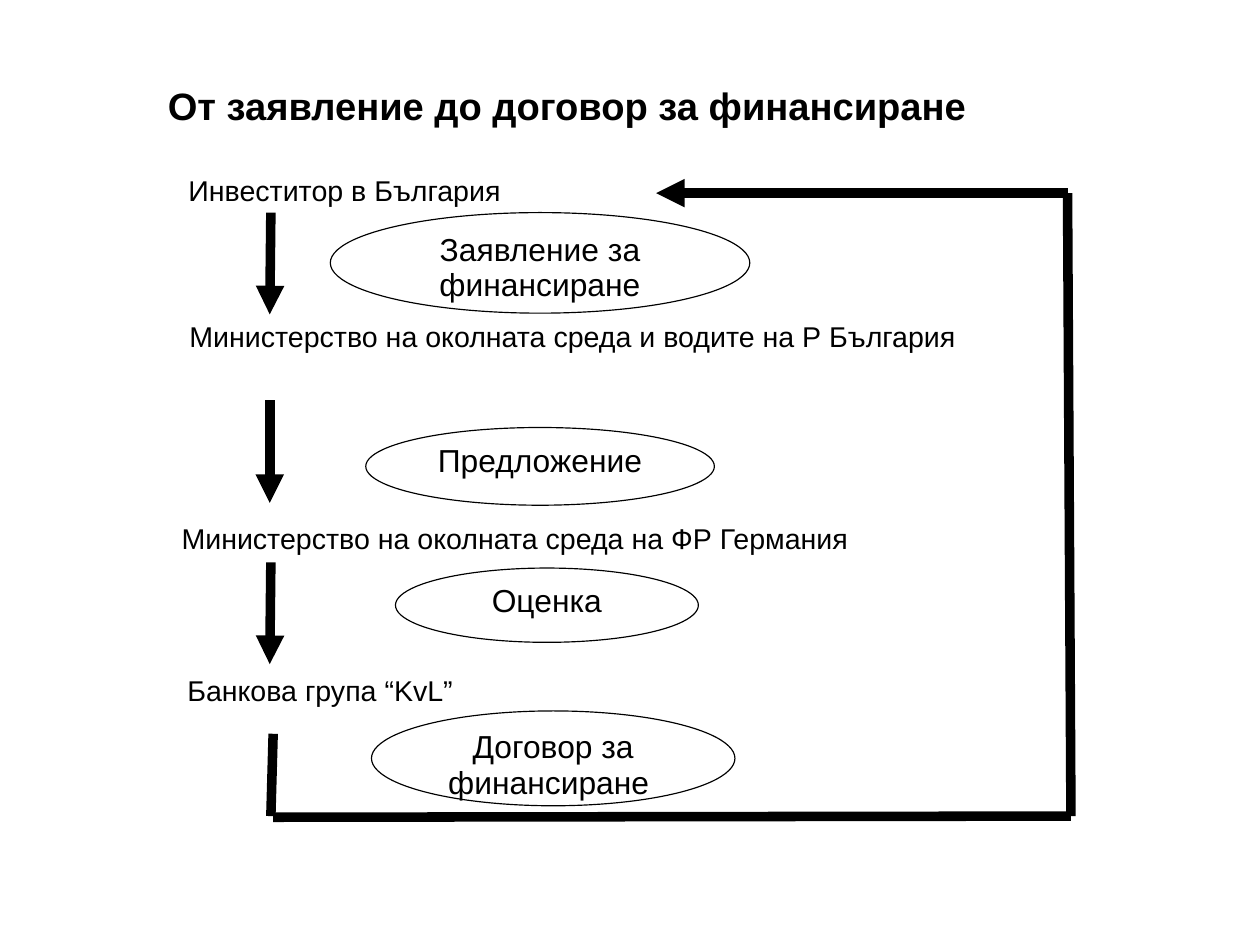
from dataclasses import dataclass

from lxml import etree
from pptx import Presentation
from pptx.dml.color import RGBColor
from pptx.enum.shapes import MSO_CONNECTOR as Connector, MSO_SHAPE as Shape
from pptx.enum.text import MSO_ANCHOR as Anchor, PP_ALIGN as Align
from pptx.oxml.ns import qn
from pptx.slide import Slide
from pptx.text.text import TextFrame
from pptx.util import Inches, Pt


@dataclass(frozen=True)
class Theme:
    font: str = "Arial"
    ink: RGBColor = RGBColor(0, 0, 0)
    paper: RGBColor = RGBColor(255, 255, 255)
    title_size: int = 24
    party_size: int = 18
    document_size: int = 20
    outline_width: float = 0.75
    flow_width: float = 6


@dataclass(frozen=True)
class Label:
    text: str
    left: float
    top: float
    width: float
    height: float


@dataclass(frozen=True)
class Flow:
    start: tuple[float, float]
    end: tuple[float, float]
    arrow: bool = False


THEME = Theme()
CM_PER_INCH = 2.54
SLIDE_CM = (28, 21)

TITLE = Label("От заявление до договор за финансиране", 1.37, 0.67, 7.25, 0.81)

INVESTOR = Label("Инвеститор в България", 1.55, 1.46, 3.02, 0.4)
GERMAN_MINISTRY = Label("Министерство на околната среда на ФР Германия", 1.49, 4.51, 6.32, 0.71)
BULGARIAN_MINISTRY = Label(
    "Министерство на околната среда и водите на Р България", 1.56, 2.74, 7.97, 0.71
)
BANK = Label("Банкова група “KvL”", 1.54, 5.84, 3.18, 0.44)

DOCUMENTS = [
    Label("Заявление за финансиране", 2.89, 1.86, 3.67, 0.88),
    Label("Предложение", 3.2, 3.74, 3.05, 0.68),
    Label("Оценка", 3.46, 4.97, 2.65, 0.65),
    Label("Договор за финансиране ", 3.25, 6.22, 3.18, 0.83),
]

RETURN_LOOP = [
    Flow((2.39, 7.15), (9.37, 7.14)),
    Flow((9.37, 7.14), (9.34, 1.69)),
    Flow((9.34, 1.69), (6.15, 1.69)),
    Flow((2.39, 6.42), (2.37, 7.14)),
    Flow((6.22, 1.69), (5.74, 1.69), arrow=True),
]

STEPS = [
    Flow((2.37, 1.86), (2.36, 2.75), arrow=True),
    Flow((2.36, 3.5), (2.36, 4.4), arrow=True),
    Flow((2.37, 4.92), (2.36, 5.81), arrow=True),
]


def box(label: Label) -> list[int]:
    """Left, top, width and height of a label as slide lengths."""
    return [Inches(n) for n in (label.left, label.top, label.width, label.height)]


def write(frame: TextFrame, text: str, size: int, bold: bool = False) -> None:
    frame.text = text
    frame.word_wrap = True
    frame.vertical_anchor = Anchor.TOP
    font = frame.paragraphs[0].runs[0].font
    font.name = THEME.font
    font.size = Pt(size)
    font.bold = bold
    font.color.rgb = THEME.ink


def add_label(slide: Slide, label: Label, size: int, bold: bool = False) -> None:
    write(slide.shapes.add_textbox(*box(label)).text_frame, label.text, size, bold)


def add_document(slide: Slide, label: Label) -> None:
    ellipse = slide.shapes.add_shape(Shape.OVAL, *box(label))
    ellipse.shadow.inherit = False
    ellipse.fill.solid()
    ellipse.fill.fore_color.rgb = THEME.paper
    ellipse.line.color.rgb = THEME.ink
    ellipse.line.width = Pt(THEME.outline_width)
    write(ellipse.text_frame, label.text, THEME.document_size)
    paragraph = ellipse.text_frame.paragraphs[0]
    paragraph.alignment = Align.CENTER
    paragraph.line_spacing = 0.93


def add_flow(slide: Slide, flow: Flow) -> None:
    ends = [Inches(n) for n in (*flow.start, *flow.end)]
    connector = slide.shapes.add_connector(Connector.STRAIGHT, *ends)
    connector.line.color.rgb = THEME.ink
    connector.line.width = Pt(THEME.flow_width)
    if flow.arrow:
        etree.SubElement(connector.line._get_or_add_ln(), qn("a:tailEnd"), type="triangle")
    etree.SubElement(connector._element.spPr, qn("a:effectLst"))


def main() -> None:
    deck = Presentation()
    deck.slide_width, deck.slide_height = [Inches(cm / CM_PER_INCH) for cm in SLIDE_CM]
    slide = deck.slides.add_slide(deck.slide_layouts[6])

    add_label(slide, TITLE, THEME.title_size, bold=True)
    for party in (INVESTOR, GERMAN_MINISTRY):
        add_label(slide, party, THEME.party_size)
    for document in DOCUMENTS:
        add_document(slide, document)
    for party in (BULGARIAN_MINISTRY, BANK):
        add_label(slide, party, THEME.party_size)
    for flow in RETURN_LOOP + STEPS:
        add_flow(slide, flow)

    deck.save("out.pptx")


if __name__ == "__main__":
    main()
